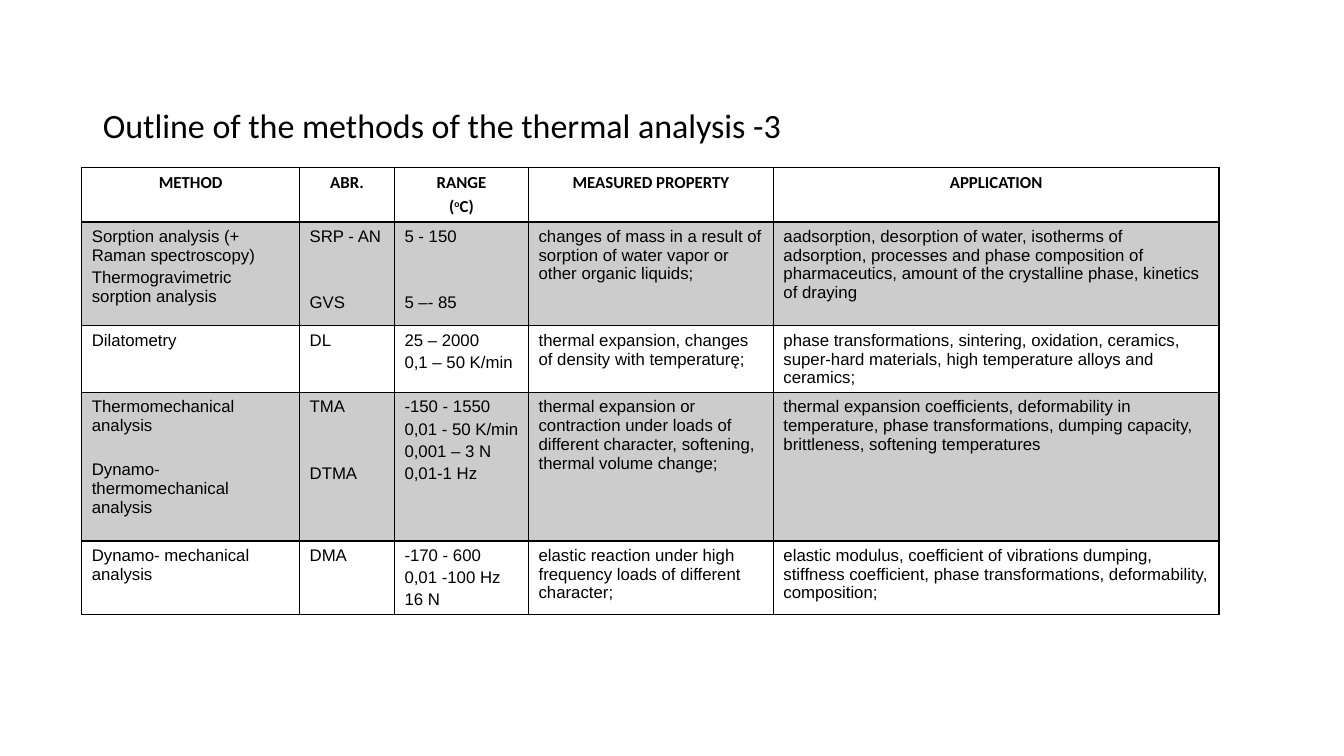
from lxml.etree import SubElement
from pptx import Presentation
from pptx.dml.color import RGBColor
from pptx.enum.text import MSO_ANCHOR, PP_ALIGN
from pptx.oxml.ns import qn
from pptx.util import Cm, Pt

COLORS = {"ink": "000000", "band": "CCCCCC"}
WIDTHS = [5.49, 2.39, 3.38, 6.17, 11.23]
HEIGHTS = [1.37, 2.62, 1.68, 3.74, 1.84]
SPACE = 2.4
SKIP = 15.8

HEAD = [["METHOD"], ["ABR."], ["RANGE", "(^o^C)"], ["MEASURED PROPERTY"], ["APPLICATION"]]
BODY = [
    [
        ["Sorption analysis (+ Raman spectroscopy)", "Thermogravimetric sorption analysis"],
        ["SRP - AN", (2, "GVS")],
        ["5 - 150", (2, "5 –- 85")],
        ["changes of mass in a result of sorption of water vapor or other organic liquids;"],
        ["aadsorption, desorption of water, isotherms of adsorption, processes and phase "
         "composition of pharmaceutics, amount of the crystalline phase, kinetics of draying"],
    ],
    [
        ["Dilatometry"],
        ["DL"],
        ["25 – 2000", "0,1 – 50 K/min"],
        ["thermal expansion, changes of density with temperaturę;"],
        ["phase transformations, sintering, oxidation, ceramics, super-hard materials, "
         "high temperature alloys and ceramics;"],
    ],
    [
        ["Thermomechanical analysis", (1, "Dynamo-thermomechanical analysis")],
        ["TMA", (2, "DTMA")],
        ["-150 - 1550", "0,01 - 50 K/min", "0,001 – 3 N", "0,01-1 Hz"],
        ["thermal expansion or contraction under loads of different character, softening, "
         "thermal volume change;"],
        ["thermal expansion coefficients, deformability in temperature, phase "
         "transformations, dumping capacity, brittleness, softening temperatures"],
    ],
    [
        ["Dynamo- mechanical analysis"],
        ["DMA"],
        ["-170 - 600", "0,01 -100 Hz", "16 N"],
        ["elastic reaction under high frequency loads of different character;"],
        ["elastic modulus, coefficient of vibrations dumping, stiffness coefficient, "
         "phase transformations, deformability, composition;"],
    ],
]


def color(name):
    return RGBColor.from_string(COLORS[name])


def write(frame, lines, font="Arial", size=12, bold=False, align=PP_ALIGN.LEFT, pitch=None):
    for i, line in enumerate(lines):
        skip, text = line if isinstance(line, tuple) else (0, line)
        para = frame.paragraphs[0] if i == 0 else frame.add_paragraph()
        para.alignment = align
        para.space_before = Pt(SPACE + skip * SKIP if i else 0)
        if pitch:
            para.line_spacing = pitch
        for j, part in enumerate(text.split("^")):
            run = para.add_run()
            run.text = part
            run.font.name = font
            run.font.size = Pt(size)
            run.font.bold = bold
            run.font.color.rgb = color("ink")
            if j % 2:
                run.font._element.set("baseline", "30000")


def add_title(slide):
    title = slide.shapes.title
    title.left, title.top, title.width, title.height = Cm(2.34), Cm(1.96), Cm(29.21), Cm(2.01)
    frame = title.text_frame
    frame.word_wrap = True
    frame.vertical_anchor = MSO_ANCHOR.MIDDLE
    frame.margin_top = Cm(0.64)
    write(frame, ["Outline of the methods of the thermal analysis -3"],
          font="Calibri", size=24.3, pitch=0.9)


def set_edges(cell, top, bottom):
    props = cell._tc.get_or_add_tcPr()
    edges = {"L": 1, "R": 1, "T": top, "B": bottom}
    for i, (side, width) in enumerate(edges.items()):
        edge = SubElement(props, qn(f"a:ln{side}"), w=str(Pt(width)))
        fill = SubElement(edge, qn("a:solidFill"))
        SubElement(fill, qn("a:srgbClr"), val=COLORS["ink"])
        props.insert(i, edge)


def add_grid(slide):
    rows = [HEAD] + BODY
    shape = slide.shapes.add_table(len(rows), len(WIDTHS), Cm(2.06), Cm(4.22),
                                   Cm(sum(WIDTHS)), Cm(sum(HEIGHTS)))
    table = shape.table
    table.horz_banding = False
    for col, width in zip(table.columns, WIDTHS):
        col.width = Cm(width)
    for r, (row, height) in enumerate(zip(rows, HEIGHTS)):
        table.rows[r].height = Cm(height)
        for c, lines in enumerate(row):
            cell = table.cell(r, c)
            if r % 2:
                cell.fill.solid()
                cell.fill.fore_color.rgb = color("band")
            else:
                cell.fill.background()
            set_edges(cell, top=2 if r == 1 else 1, bottom=2 if r == 0 else 1)
            if r == 0:
                write(cell.text_frame, lines, font="Calibri", bold=True, align=PP_ALIGN.CENTER)
            else:
                write(cell.text_frame, lines)


def main():
    deck = Presentation()
    deck.slide_width, deck.slide_height = Cm(33.87), Cm(19.05)
    slide = deck.slides.add_slide(deck.slide_layouts[5])
    add_title(slide)
    add_grid(slide)
    deck.save("out.pptx")


if __name__ == "__main__":
    main()
